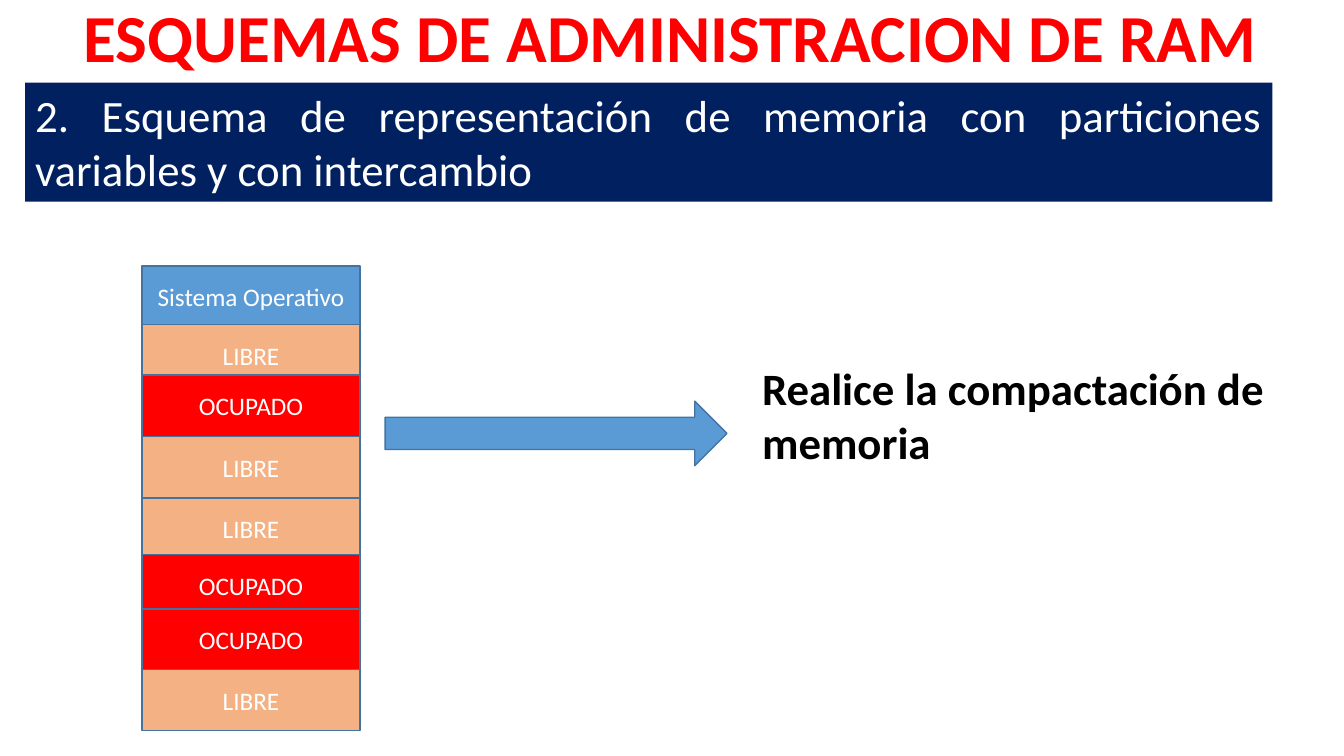
from pptx import Presentation
from pptx.dml.color import RGBColor
from pptx.enum.shapes import MSO_SHAPE
from pptx.enum.text import MSO_ANCHOR, MSO_AUTO_SIZE, PP_ALIGN
from pptx.util import Inches, Pt

FONT = "Calibri"
RED = RGBColor(0xFF, 0x00, 0x00)
NAVY = RGBColor(0x00, 0x20, 0x60)
BLUE = RGBColor(0x5B, 0x9B, 0xD5)
OUTLINE = RGBColor(0x43, 0x73, 0x9E)
PEACH = RGBColor(0xF4, 0xB1, 0x83)
WHITE = RGBColor(0xFF, 0xFF, 0xFF)
BLACK = RGBColor(0x00, 0x00, 0x00)

# Memory column: shared left edge and block size, in inches
MEMORY_LEFT, BLOCK_WIDTH, BLOCK_HEIGHT = 1.41, 2.16, 0.61
BLOCK_FILLS = {"Sistema Operativo": BLUE, "LIBRE": PEACH, "OCUPADO": RED}
# Later blocks partly cover the earlier ones
MEMORY_BLOCKS = [
    (2.64, "Sistema Operativo"),
    (3.22, "LIBRE"),
    (3.72, "OCUPADO"),
    (4.33, "LIBRE"),
    (4.94, "LIBRE"),
    (5.50, "OCUPADO"),
    (6.04, "OCUPADO"),
    (6.64, "LIBRE"),
]


def write_text(box, text, size, color, bold=False,
               align=PP_ALIGN.LEFT, anchor=MSO_ANCHOR.TOP):
    frame = box.text_frame
    frame.text = text
    frame.word_wrap = True
    frame.auto_size = MSO_AUTO_SIZE.NONE
    frame.vertical_anchor = anchor
    para = frame.paragraphs[0]
    para.alignment = align
    font = para.runs[0].font
    font.name, font.size, font.bold = FONT, Pt(size), bold
    font.color.rgb = color


def add_title(slide, text):
    title = slide.shapes.title
    title.left, title.top = Inches(0.73), Inches(-0.1)
    title.width, title.height = Inches(12.14), Inches(0.91)
    write_text(title, text, 48, RED, bold=True)


def add_filled_shape(slide, kind, left, top, width, height, fill, line=None):
    shape = slide.shapes.add_shape(
        kind, Inches(left), Inches(top), Inches(width), Inches(height))
    shape.shadow.inherit = False
    shape.fill.solid()
    shape.fill.fore_color.rgb = fill
    if line is None:
        shape.line.fill.background()
    else:
        shape.line.color.rgb = line
        shape.line.width = Pt(1)
    return shape


def add_memory_block(slide, top, label):
    block = add_filled_shape(slide, MSO_SHAPE.RECTANGLE, MEMORY_LEFT, top,
                             BLOCK_WIDTH, BLOCK_HEIGHT, BLOCK_FILLS[label], OUTLINE)
    write_text(block, label, 18, WHITE,
               align=PP_ALIGN.CENTER, anchor=MSO_ANCHOR.MIDDLE)


def main():
    deck = Presentation()
    deck.slide_width, deck.slide_height = Inches(13.33), Inches(7.5)
    slide = deck.slides.add_slide(deck.slide_layouts.get_by_name("Title Only"))

    # Heading and subtitle band
    add_title(slide, "ESQUEMAS DE ADMINISTRACION DE RAM")
    band = add_filled_shape(slide, MSO_SHAPE.RECTANGLE, 0.25, 0.82, 12.37, 1.18, NAVY)
    write_text(band, "2. Esquema de representación de memoria con particiones "
               "variables y con intercambio", 32, WHITE, align=PP_ALIGN.JUSTIFY)

    # Task text
    task = slide.shapes.add_textbox(
        Inches(7.46), Inches(3.53), Inches(5.41), Inches(1.18))
    write_text(task, "Realice la compactación de memoria", 32, BLACK, bold=True)

    # Memory map and arrow
    for top, label in MEMORY_BLOCKS:
        add_memory_block(slide, top, label)
    add_filled_shape(slide, MSO_SHAPE.RIGHT_ARROW, 3.82, 3.98, 3.39, 0.64, BLUE, OUTLINE)

    deck.save("out.pptx")


if __name__ == "__main__":
    main()
